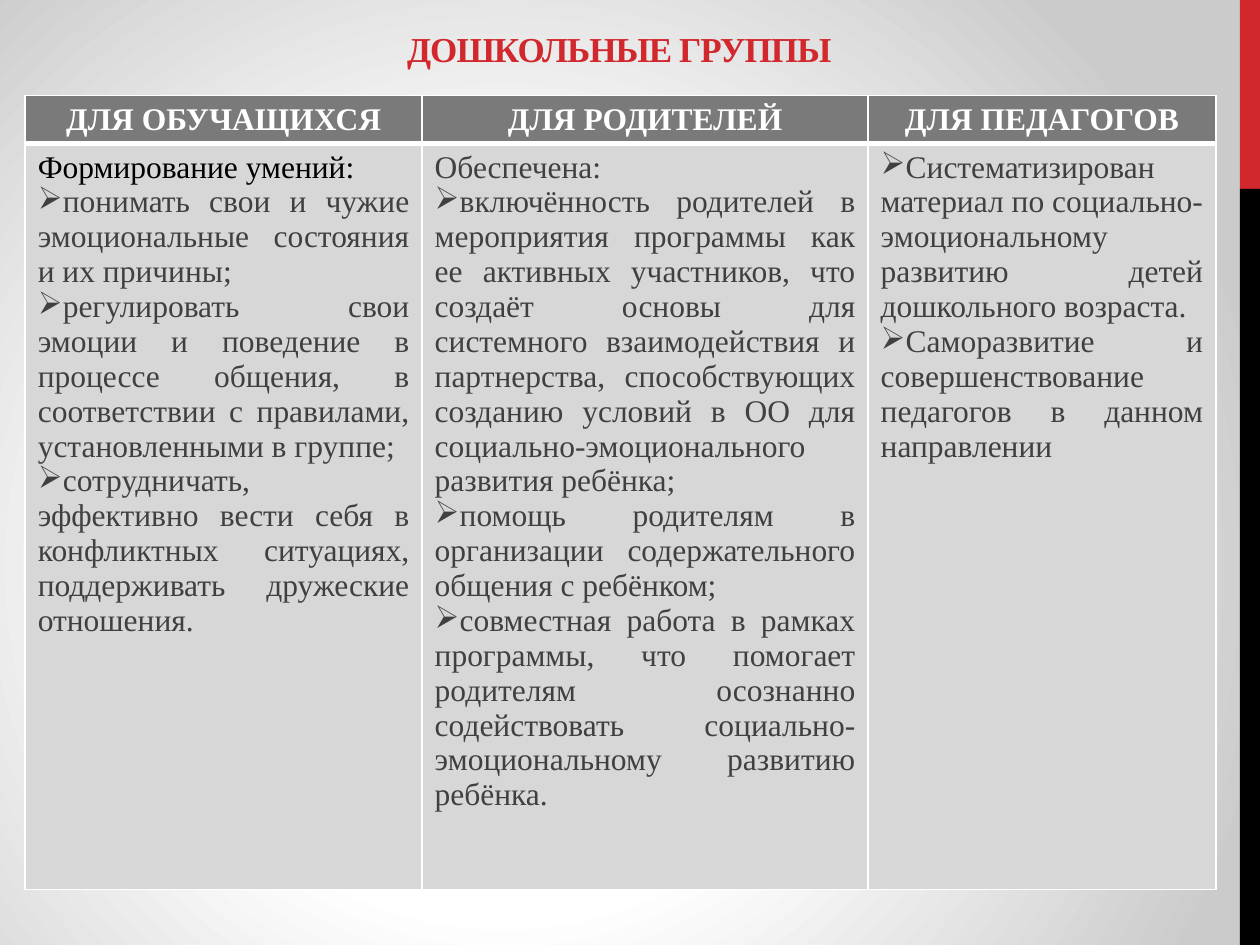
from lxml import etree
from pptx import Presentation
from pptx import util as u
from pptx.dml.color import RGBColor
from pptx.enum import shapes, text
from pptx.oxml import ns

RED = RGBColor(0xD1, 0x28, 0x2E)
BLACK = RGBColor(0, 0, 0)
WHITE = RGBColor(0xFF, 0xFF, 0xFF)
SILVER = RGBColor(0xCB, 0xCB, 0xCB)
HEADER_GREY = RGBColor(0x7A, 0x7A, 0x7A)
BODY_GREY = RGBColor(0xD7, 0xD7, 0xD7)
TEXT_GREY = RGBColor(0x40, 0x40, 0x40)
BULLET = "➢"
COLUMN_WIDTHS = (3.15, 3.54, 2.76)
ROW_HEIGHTS = (0.38, 5.92)

COLUMNS = (
    ("ДЛЯ ОБУЧАЩИХСЯ", ("Формирование умений:", BLACK), (
        "понимать свои и чужие эмоциональные состояния и их причины;",
        "регулировать свои эмоции и поведение в процессе общения, "
        "в соответствии с правилами, установленными в группе;",
        "сотрудничать, эффективно вести себя в конфликтных ситуациях, "
        "поддерживать дружеские отношения.",
    )),
    ("ДЛЯ РОДИТЕЛЕЙ", ("Обеспечена:", TEXT_GREY), (
        "включённость родителей в мероприятия программы как ее активных "
        "участников, что создаёт основы для системного взаимодействия и "
        "партнерства, способствующих созданию условий в ОО для "
        "социально-эмоционального развития ребёнка;",
        "помощь родителям в организации содержательного общения с ребёнком;",
        "совместная работа в рамках программы, что помогает родителям "
        "осознанно содействовать социально-эмоциональному развитию ребёнка.",
    )),
    ("ДЛЯ ПЕДАГОГОВ", None, (
        "Систематизирован материал по социально-эмоциональному развитию "
        "детей дошкольного возраста.",
        "Саморазвитие и совершенствование педагогов в данном направлении",
    )),
)


def add_element(parent, tag, **attributes):
    element = etree.SubElement(parent, ns.qn(tag))
    for name, value in attributes.items():
        element.set(name, str(value))
    return element


class SlideBuilder:
    """Holds the text style and the current slide, and adds elements to it."""

    def __init__(self, slide, font="Times New Roman"):
        self.slide = slide
        self.font = font

    def background(self, stops, left, top, right, bottom):
        self.slide.background.fill.gradient()
        gradient = self.slide.element.find(".//" + ns.qn("a:gradFill"))
        for child in list(gradient):
            gradient.remove(child)
        stop_list = add_element(gradient, "a:gsLst")
        for percent, color in stops:
            stop = add_element(stop_list, "a:gs", pos=percent * 1000)
            add_element(stop, "a:srgbClr", val=color)
        circle = add_element(gradient, "a:path", path="circle")
        add_element(circle, "a:fillToRect", l=left * 1000, t=top * 1000,
                    r=right * 1000, b=bottom * 1000)

    def bar(self, left, top, width, height, color):
        shape = self.slide.shapes.add_shape(
            shapes.MSO_SHAPE.RECTANGLE, *map(u.Inches, (left, top, width, height)))
        shape.shadow.inherit = False
        shape.fill.solid()
        shape.fill.fore_color.rgb = color
        shape.line.fill.background()

    def run(self, paragraph, words, size, color, bold=False):
        run = paragraph.add_run()
        run.text = words
        run.font.name = self.font
        run.font.size = u.Pt(size)
        run.font.bold = bold
        run.font.color.rgb = color
        return run

    def title(self, left, top, width, height, words):
        box = self.slide.shapes.add_textbox(*map(u.Inches, (left, top, width, height)))
        frame = box.text_frame
        frame.word_wrap = True
        frame.vertical_anchor = text.MSO_ANCHOR.BOTTOM
        paragraph = frame.paragraphs[0]
        paragraph.alignment = text.PP_ALIGN.CENTER
        run = self.run(paragraph, words, 20, RED, bold=True)
        run.font._element.set("spc", "-60")

    def cell(self, cell, fill, bottom_width):
        properties = cell._tc.get_or_add_tcPr()
        for side, width in (("L", 1), ("R", 1), ("T", 1), ("B", bottom_width)):
            line = add_element(properties, "a:ln" + side, w=u.Pt(width))
            add_element(add_element(line, "a:solidFill"), "a:srgbClr", val=WHITE)
        cell.fill.solid()
        cell.fill.fore_color.rgb = fill

    def body(self, cell, intro, items):
        entries = [(intro[0], intro[1], False)] if intro else []
        entries += [(item, TEXT_GREY, True) for item in items]
        frame = cell.text_frame
        for index, (words, color, bulleted) in enumerate(entries):
            paragraph = frame.add_paragraph() if index else frame.paragraphs[0]
            paragraph.alignment = text.PP_ALIGN.JUSTIFY
            if bulleted:
                properties = paragraph._p.get_or_add_pPr()
                properties.set("marL", "0")
                properties.set("indent", "0")
                add_element(properties, "a:buChar", char=BULLET)
            self.run(paragraph, words, 18, color)

    def table(self, left, top, columns):
        table = self.slide.shapes.add_table(
            2, len(columns), u.Inches(left), u.Inches(top),
            u.Inches(sum(COLUMN_WIDTHS)), u.Inches(sum(ROW_HEIGHTS))).table
        for row, height in zip(table.rows, ROW_HEIGHTS):
            row.height = u.Inches(height)
        for index, (heading, intro, items) in enumerate(columns):
            table.columns[index].width = u.Inches(COLUMN_WIDTHS[index])
            header, body = table.cell(0, index), table.cell(1, index)
            self.cell(header, HEADER_GREY, 3)
            self.cell(body, BODY_GREY, 1)
            paragraph = header.text_frame.paragraphs[0]
            paragraph.alignment = text.PP_ALIGN.CENTER
            self.run(paragraph, heading, 18, WHITE, bold=True)
            self.body(body, intro, items)


def main():
    presentation = Presentation()
    presentation.slide_width = u.Inches(10)
    presentation.slide_height = u.Inches(7.5)
    builder = SlideBuilder(presentation.slides.add_slide(presentation.slide_layouts[6]))
    builder.background(((0, WHITE), (44, WHITE), (100, SILVER)), 40, 60, 60, 40)
    builder.bar(9.84, 0, 0.16, 1.5, RED)
    builder.bar(9.84, 1.5, 0.16, 6, BLACK)
    builder.table(0.2, 0.76, COLUMNS)
    builder.title(0.5, 0.17, 8.83, 0.43, "ДОШКОЛЬНЫЕ ГРУППЫ")
    presentation.save("out.pptx")


if __name__ == "__main__":
    main()
